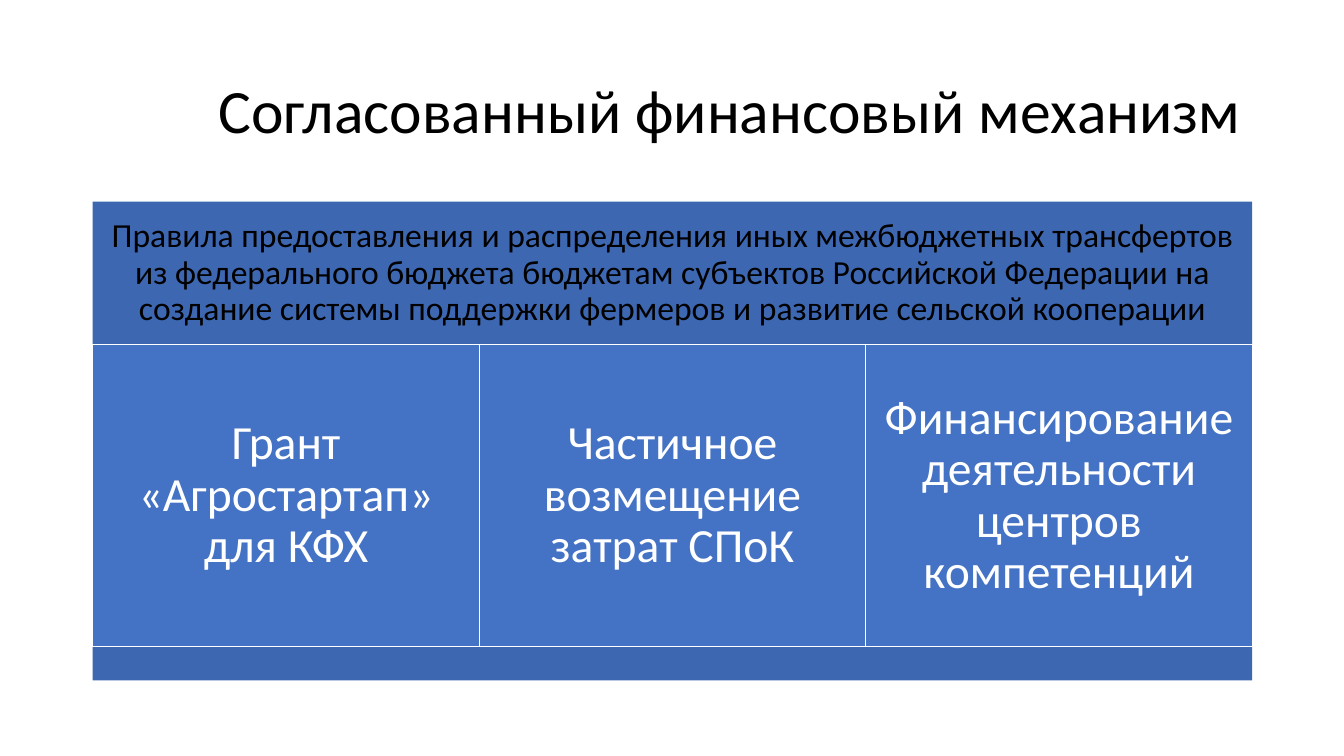
from dataclasses import dataclass

from pptx import Presentation
from pptx.dml.color import RGBColor
from pptx.enum.shapes import MSO_SHAPE
from pptx.enum.text import MSO_ANCHOR, PP_ALIGN
from pptx.util import Inches, Pt


@dataclass(frozen=True)
class Theme:
    """Colours, font and type sizes of the slide."""
    font: str = "Calibri"
    black: str = "000000"
    white: str = "FFFFFF"
    band: str = "3E67B2"
    card: str = "4472C4"
    title: int = 44
    rule: int = 24
    item: int = 34


THEME = Theme()
LEFT, WIDTH = 0.92, 11.5
TITLE = "Согласованный финансовый механизм"
RULES = (
    "Правила предоставления и распределения иных межбюджетных трансфертов "
    "из федерального бюджета бюджетам субъектов Российской Федерации на "
    "создание системы поддержки фермеров и развитие сельской кооперации"
)
ITEMS = [
    "Грант «Агростартап» для КФХ",
    "Частичное возмещение затрат СПоК",
    "Финансирование деятельности центров компетенций",
]


def put_text(shape, text, *, size, color, align=PP_ALIGN.CENTER, inset=0.1):
    """Write one formatted paragraph into a shape."""
    frame = shape.text_frame
    frame.word_wrap = True
    frame.vertical_anchor = MSO_ANCHOR.MIDDLE
    frame.margin_left = frame.margin_right = Inches(inset)
    frame.margin_top = frame.margin_bottom = Inches(inset)
    para = frame.paragraphs[0]
    para.alignment = align
    para.line_spacing = 0.9
    run = para.add_run()
    run.text = text
    run.font.name = THEME.font
    run.font.size = Pt(size)
    run.font.color.rgb = RGBColor.from_string(color)


def place(shape, left, top, width, height):
    """Set the position and size of a shape in inches."""
    shape.left, shape.top = Inches(left), Inches(top)
    shape.width, shape.height = Inches(width), Inches(height)


def add_box(slide, left, top, width, height, *, fill, line=None):
    """Add a plain rectangle with an optional outline."""
    box = slide.shapes.add_shape(
        MSO_SHAPE.RECTANGLE, Inches(left), Inches(top),
        Inches(width), Inches(height))
    box.shadow.inherit = False
    box.fill.solid()
    box.fill.fore_color.rgb = RGBColor.from_string(fill)
    if line:
        box.line.color.rgb = RGBColor.from_string(line)
        box.line.width = Pt(1)
    else:
        box.line.fill.background()
    return box


def add_cards(slide, items, top, height):
    """Add a row of equal cards across the full width."""
    width = WIDTH / len(items)
    for col, item in enumerate(items):
        card = add_box(slide, LEFT + col * width, top, width, height,
                       fill=THEME.card, line=THEME.white)
        put_text(card, item, size=THEME.item, color=THEME.white, inset=0.14)


def main():
    """Build the slide and save it."""
    deck = Presentation()
    deck.slide_width, deck.slide_height = Inches(13.33), Inches(7.5)
    slide = deck.slides.add_slide(deck.slide_layouts[5])
    title = slide.shapes.title
    place(title, LEFT, 0.4, WIDTH, 1.45)
    put_text(title, TITLE, size=THEME.title, color=THEME.black,
             align=PP_ALIGN.RIGHT)
    head = add_box(slide, LEFT, 2, WIDTH, 1.42, fill=THEME.band)
    put_text(head, RULES, size=THEME.rule, color=THEME.black)
    add_cards(slide, ITEMS, 3.42, 3)
    add_box(slide, LEFT, 6.42, WIDTH, 0.33, fill=THEME.band)
    deck.save("out.pptx")


if __name__ == "__main__":
    main()
